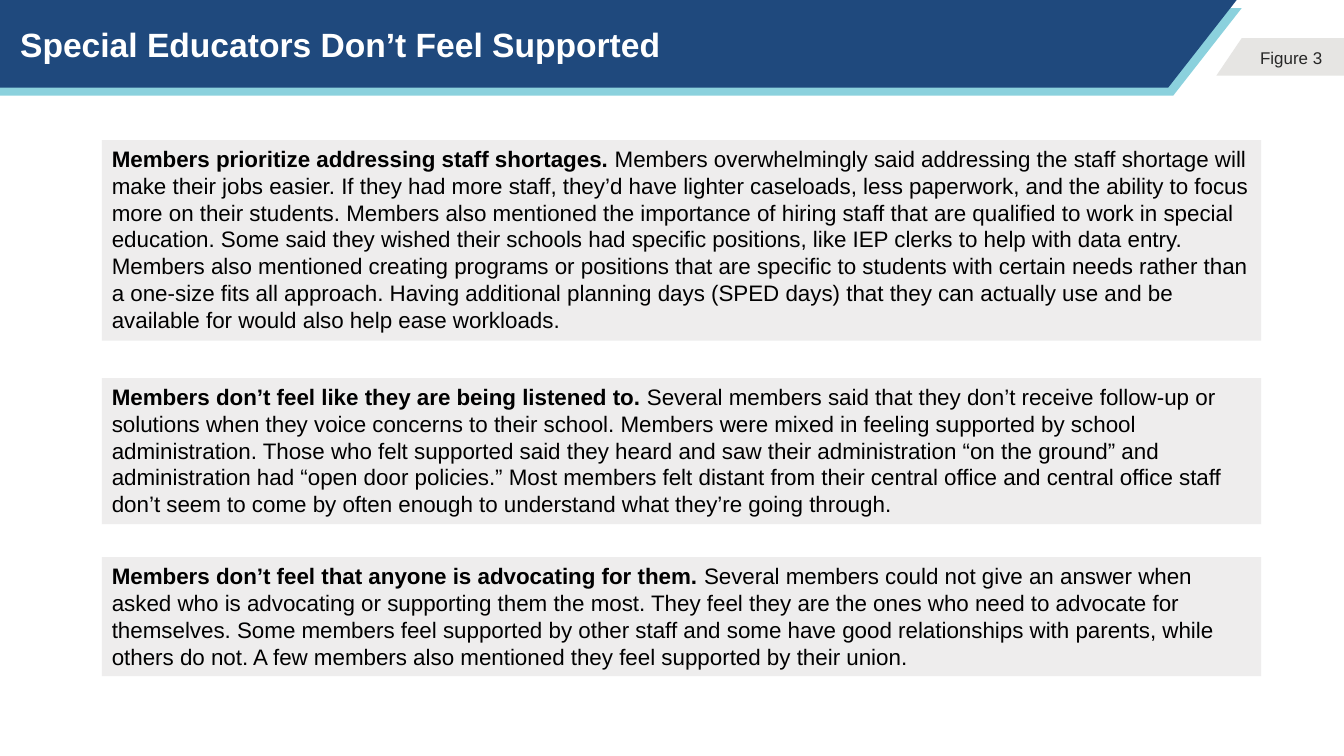
"""Build the slide on special educators who do not feel supported."""
import pptx
import pptx.dml.color
import pptx.enum.shapes
import pptx.enum.text
import pptx.util

Pt = pptx.util.Pt


def paint(fill, color):
    fill.solid()
    fill.fore_color.rgb = pptx.dml.color.RGBColor.from_string(color)


def add_span(para, text, size, color, bold=False):
    span = para.add_run()
    span.text = text
    span.font.name = "Arial"
    span.font.size = Pt(size)
    span.font.bold = bold
    paint(span.font.fill, color)


deck = pptx.Presentation()
deck.slide_width = Pt(960)
deck.slide_height = Pt(540)
page = deck.slides.add_slide(deck.slide_layouts[6])

outlines = [
    ("8BD1DD", [(0, 5.8), (887, 5.8), (838, 68.4), (0, 68.4)]),
    ("1F497D", [(0, 0), (883.4, 0), (834.5, 62.6), (0, 62.6)]),
    ("E6E5E3", [(887, 27.2), (960, 27.2), (960, 54.1), (868.8, 54.1)]),
]
for color, corners in outlines:
    points = [(Pt(x), Pt(y)) for x, y in corners]
    builder = page.shapes.build_freeform(*points[0])
    builder.add_line_segments(points[1:])
    band = builder.convert_to_shape()
    paint(band.fill, color)
    band.line.fill.background()
    band.shadow.inherit = False

title = page.shapes.add_textbox(Pt(0), Pt(0), Pt(883.4), Pt(62.6))
title.text_frame.word_wrap = True
title.text_frame.margin_left = title.text_frame.margin_right = Pt(14.4)
title.text_frame.vertical_anchor = pptx.enum.text.MSO_ANCHOR.MIDDLE
add_span(title.text_frame.paragraphs[0], "Special Educators Don’t Feel Supported", 24, "FFFFFF", True)

label = page.shapes.add_textbox(Pt(888.5), Pt(30.2), Pt(67.7), Pt(21.6))
label.text_frame.word_wrap = False
label.text_frame.vertical_anchor = pptx.enum.text.MSO_ANCHOR.MIDDLE
label.text_frame.paragraphs[0].alignment = pptx.enum.text.PP_ALIGN.CENTER
add_span(label.text_frame.paragraphs[0], "Figure 3", 12.1, "262626")

findings = [
    (100, 143.3, "Members prioritize addressing staff shortages. ",
     "Members overwhelmingly said addressing the staff shortage will make their jobs easier. "
     "If they had more staff, they’d have lighter caseloads, less paperwork, and the ability to "
     "focus more on their students. Members also mentioned the importance of hiring staff that "
     "are qualified to work in special education. Some said they wished their schools had "
     "specific positions, like IEP clerks to help with data entry. Members also mentioned "
     "creating programs or positions that are specific to students with certain needs rather "
     "than a one-size fits all approach. Having additional planning days (SPED days) that they "
     "can actually use and be available for would also help ease workloads."),
    (270, 104.4, "Members don’t feel like they are being listened to. ",
     "Several members said that they don’t receive follow-up or solutions when they voice "
     "concerns to their school. Members were mixed in feeling supported by school "
     "administration. Those who felt supported said they heard and saw their administration "
     "“on the ground” and administration had “open door policies.” Most members felt distant "
     "from their central office and central office staff don’t seem to come by often enough to "
     "understand what they’re going through."),
    (398, 85, "Members don’t feel that anyone is advocating for them. ",
     "Several members could not give an answer when asked who is advocating or supporting them "
     "the most. They feel they are the ones who need to advocate for themselves. Some members "
     "feel supported by other staff and some have good relationships with parents, while others "
     "do not. A few members also mentioned they feel supported by their union."),
]
for top, height, heading, detail in findings:
    box = page.shapes.add_shape(
        pptx.enum.shapes.MSO_SHAPE.RECTANGLE, Pt(72.8), Pt(top), Pt(828), Pt(height))
    paint(box.fill, "EEEDED")
    box.line.fill.background()
    box.shadow.inherit = False
    box.text_frame.word_wrap = True
    box.text_frame.vertical_anchor = pptx.enum.text.MSO_ANCHOR.TOP
    para = box.text_frame.paragraphs[0]
    para.alignment = pptx.enum.text.PP_ALIGN.LEFT
    add_span(para, heading, 16, "000000", True)
    add_span(para, detail, 16, "000000")

deck.save("out.pptx")
